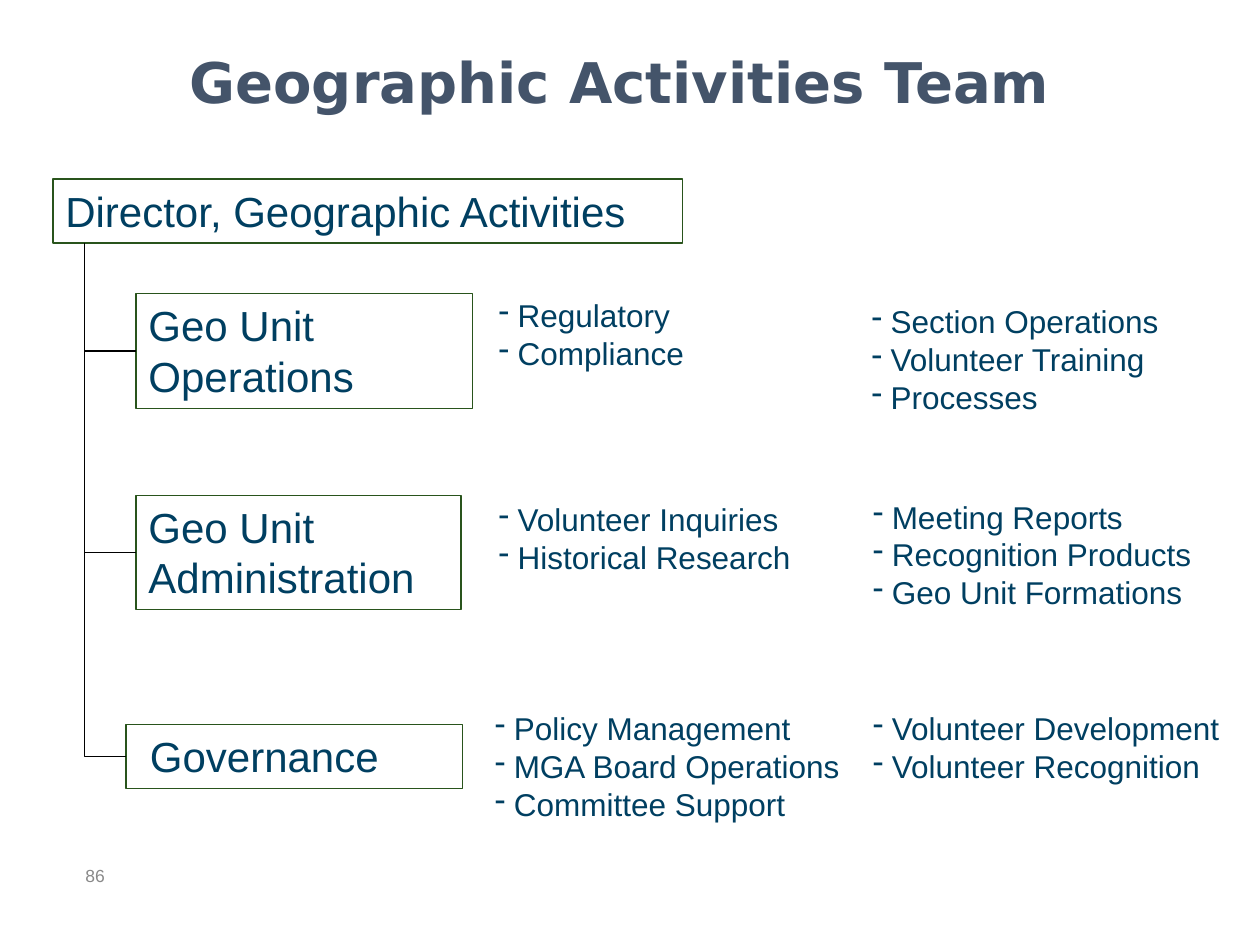
"""Build the Geographic Activities Team organisation slide."""
from dataclasses import dataclass

from pptx import Presentation, util as u
from pptx.dml.color import RGBColor
from pptx.enum import shapes, text
from pptx.oxml.ns import qn
from lxml import etree


@dataclass(frozen=True)
class Theme:
    font: str = "Arial"
    title_font: str = "DejaVu Sans"
    title: str = "44546A"
    ink: str = "003F61"
    border: str = "29541C"
    trunk: str = "000000"
    muted: str = "898989"
    title_size: int = 32
    role_size: int = 24
    list_size: int = 18
    number_size: int = 10
    line_width: float = 0.75
    hang: float = 0.15


class TeamSlide:
    def __init__(self, page, theme):
        self.page = page
        self.theme = theme

    def fill_text(self, shape, lines, size, color, font=None, bold=False):
        frame = shape.text_frame
        frame.word_wrap = True
        frame.text = "\n".join(lines)
        for para in frame.paragraphs:
            para.alignment = text.PP_ALIGN.LEFT
            for span in para.runs:
                span.font.name = font or self.theme.font
                span.font.size = u.Pt(size)
                span.font.bold = bold
                span.font.color.rgb = RGBColor.from_string(color)
        return frame

    def label(self, place, lines, size, color, **style):
        box = self.page.shapes.add_textbox(*map(u.Inches, place))
        return self.fill_text(box, lines, size, color, **style)

    def title(self, place, words):
        frame = self.label(place, [words], self.theme.title_size, self.theme.title,
                           font=self.theme.title_font, bold=True)
        frame.paragraphs[0].alignment = text.PP_ALIGN.CENTER

    def number(self, place, words):
        frame = self.label(place, [words], self.theme.number_size, self.theme.muted)
        frame.vertical_anchor = text.MSO_ANCHOR.MIDDLE

    def role(self, place, words, inset=0.1):
        box = self.page.shapes.add_shape(shapes.MSO_SHAPE.RECTANGLE, *map(u.Inches, place))
        box.shadow.inherit = False
        box.fill.background()
        box.line.color.rgb = RGBColor.from_string(self.theme.border)
        box.line.width = u.Pt(self.theme.line_width)
        frame = self.fill_text(box, [words], self.theme.role_size, self.theme.ink)
        frame.vertical_anchor = text.MSO_ANCHOR.TOP
        frame.margin_left = u.Inches(inset)

    def duties(self, place, lines):
        frame = self.label(place, lines, self.theme.list_size, self.theme.ink)
        hang = u.Inches(self.theme.hang)
        for para in frame.paragraphs:
            properties = para._p.get_or_add_pPr()
            properties.set("marL", str(hang))
            properties.set("indent", str(-hang))
            etree.SubElement(properties, qn("a:buChar")).set("char", "-")

    def branch(self, x, top, end_x, end_y):
        across, down = end_x - x, end_y - top
        line = self.page.shapes.add_connector(
            shapes.MSO_CONNECTOR.ELBOW, *map(u.Inches, (x, top, end_x, end_y)))
        line.left = u.Inches(x + (across - down) / 2)
        line.top = u.Inches(top + (down - across) / 2)
        line.width, line.height = u.Inches(down), u.Inches(across)
        line.line.color.rgb = RGBColor.from_string(self.theme.trunk)
        line.line.width = u.Pt(self.theme.line_width)
        properties = line._element.spPr
        properties.find(qn("a:prstGeom")).set("prst", "bentConnector2")
        frame = properties.find(qn("a:xfrm"))
        frame.set("rot", str(270 * 60000))
        frame.set("flipH", "1")
        etree.SubElement(properties, qn("a:effectLst"))


TRUNK_X, TRUNK_TOP = 0.67, 1.93
TEAMS = [
    ("Geo Unit Operations", (1.08, 2.33, 2.67, 0.91), 0.1, [
        ((3.86, 2.3, 3, 0.71), ["Regulatory", "Compliance"]),
        ((6.82, 2.35, 3, 1.01), ["Section Operations", "Volunteer Training", "Processes"]),
    ]),
    ("Geo Unit Administration", (1.08, 3.93, 2.58, 0.91), 0.1, [
        ((3.86, 3.92, 3, 0.71), ["Volunteer Inquiries", "Historical Research"]),
        ((6.83, 3.9, 3.17, 1.01),
         ["Meeting Reports", "Recognition Products", "Geo Unit Formations"]),
    ]),
    ("Governance", (1, 5.75, 2.67, 0.51), 0.19, [
        ((3.83, 5.58, 3, 1.01),
         ["Policy Management", "MGA Board Operations", "Committee Support"]),
        ((6.83, 5.58, 3.17, 0.71), ["Volunteer Development", "Volunteer Recognition"]),
    ]),
]


def main():
    deck = Presentation()
    deck.slide_width, deck.slide_height = u.Inches(10), u.Inches(7.5)
    slide = TeamSlide(deck.slides.add_slide(deck.slide_layouts[6]), Theme())
    slide.title((0.67, 0.33, 8.5, 0.83), "Geographic Activities Team")
    slide.role((0.42, 1.42, 5, 0.51), "Director, Geographic Activities")
    for name, place, inset, lists in TEAMS:
        left, top, _, height = place
        slide.role(place, name, inset)
        slide.branch(TRUNK_X, TRUNK_TOP, left, top + height / 2)
        for spot, lines in lists:
            slide.duties(spot, lines)
    slide.number((0.58, 6.75, 0.75, 0.4), "86")
    deck.save("out.pptx")


if __name__ == "__main__":
    main()
